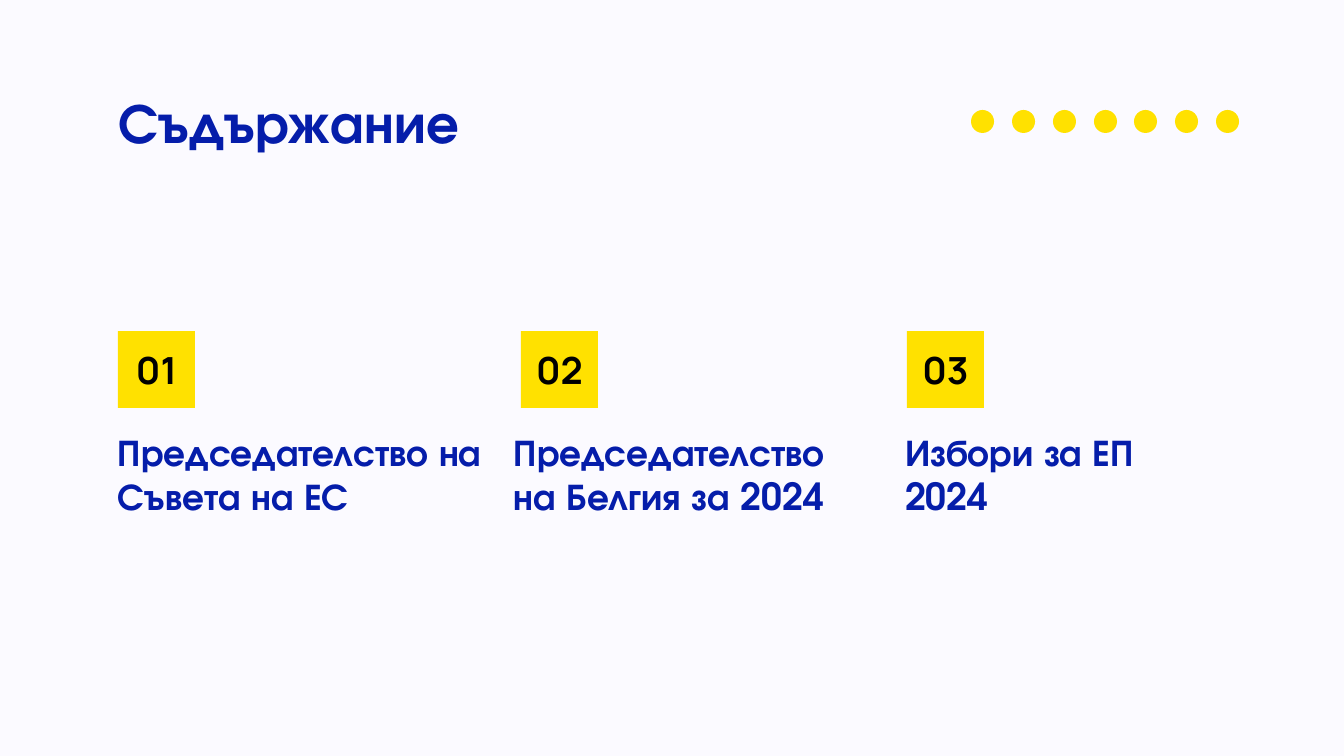
from dataclasses import dataclass

from pptx import Presentation
from pptx.dml.color import RGBColor
from pptx.enum.shapes import MSO_SHAPE
from pptx.enum.text import MSO_ANCHOR, PP_ALIGN
from pptx.util import Emu, Inches, Pt

SLIDE_W, SLIDE_H = 1344, 756
EMU_PER_PX = Inches(10) / SLIDE_W


@dataclass(frozen=True)
class Theme:
    background: RGBColor = RGBColor.from_string("FBFAFF")
    accent: RGBColor = RGBColor.from_string("FFE100")
    heading: RGBColor = RGBColor.from_string("051DAA")
    number: RGBColor = RGBColor.from_string("000000")
    heading_font: str = "TeX Gyre Adventor"
    number_font: str = "Manrope"
    title_size: int = 30
    item_size: int = 20


THEME = Theme()

# number, badge left, label left, label width, label
ITEMS = [
    ("01", 118, 105, 390, "Председателство на Съвета на ЕС"),
    ("02", 521, 501, 376, "Председателство на Белгия за 2024"),
    ("03", 907, 892, 301, "Избори за ЕП 2024"),
]
BADGE_TOP, BADGE_SIZE = 331, 77
LABEL_TOP, LABEL_HEIGHT = 435, 77
DOT_COUNT, DOT_SIZE, DOT_TOP = 7, 23, 110
FIRST_DOT, LAST_DOT = 971, 1216
INSET = 13


def px(n):
    return Emu(round(n * EMU_PER_PX))


def write(sp, text, font, size, color, align=PP_ALIGN.LEFT):
    tf = sp.text_frame
    tf.word_wrap = True
    tf.vertical_anchor = MSO_ANCHOR.MIDDLE
    tf.margin_left = tf.margin_right = px(INSET)
    tf.margin_top = tf.margin_bottom = px(INSET)
    p = tf.paragraphs[0]
    p.text = text
    p.alignment = align
    p.font.name = font
    p.font.size = Pt(size)
    p.font.bold = True
    p.font.color.rgb = color


def add_accent_shape(s, kind, left, top, size):
    sp = s.shapes.add_shape(kind, px(left), px(top), px(size), px(size))
    sp.shadow.inherit = False
    sp.fill.solid()
    sp.fill.fore_color.rgb = THEME.accent
    sp.line.fill.background()
    return sp


def add_heading(s, text, left, top, width, height, size):
    sp = s.shapes.add_textbox(px(left), px(top), px(width), px(height))
    write(sp, text, THEME.heading_font, size, THEME.heading)


def add_dots(s):
    pitch = (LAST_DOT - FIRST_DOT) / (DOT_COUNT - 1)
    for i in range(DOT_COUNT):
        left = round(FIRST_DOT + i * pitch)
        add_accent_shape(s, MSO_SHAPE.OVAL, left, DOT_TOP, DOT_SIZE)


def add_badge(s, number, left):
    sp = add_accent_shape(s, MSO_SHAPE.RECTANGLE, left, BADGE_TOP, BADGE_SIZE)
    write(sp, number, THEME.number_font, THEME.item_size, THEME.number,
          PP_ALIGN.CENTER)


def main():
    prs = Presentation()
    prs.slide_width, prs.slide_height = px(SLIDE_W), px(SLIDE_H)
    s = prs.slides.add_slide(prs.slide_layouts[6])
    s.background.fill.solid()
    s.background.fill.fore_color.rgb = THEME.background

    add_dots(s)
    add_heading(s, "Съдържание", 106, 79, 1133, 85, THEME.title_size)
    for number, badge_left, label_left, width, label in ITEMS:
        add_badge(s, number, badge_left)
        add_heading(s, label, label_left, LABEL_TOP, width, LABEL_HEIGHT,
                    THEME.item_size)

    prs.save("out.pptx")


if __name__ == "__main__":
    main()
